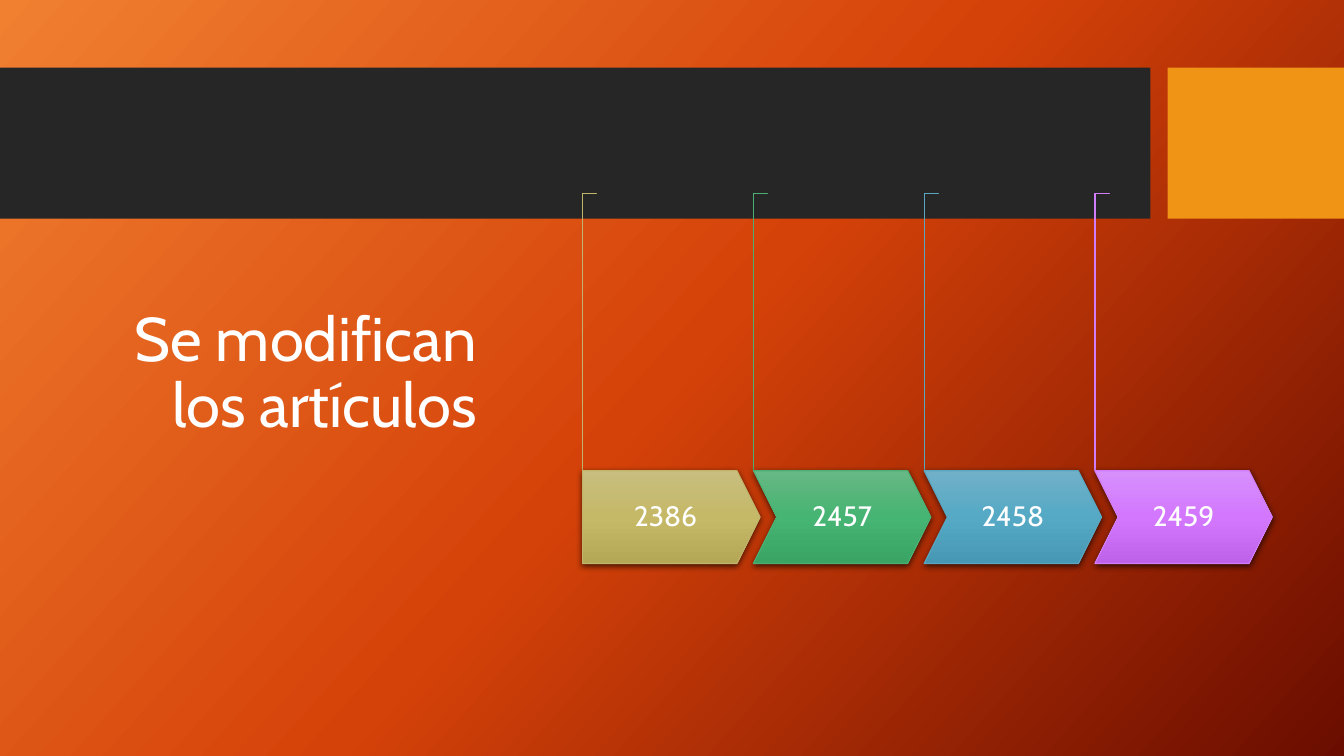
import copy

import pptx
import pptx.dml.color
import pptx.enum.shapes
import pptx.enum.text
import pptx.oxml
import pptx.oxml.ns
import pptx.util

TITLE = "Se modifican los artículos"
ARTICLES = [
    # number, line colour, gradient from top to bottom
    ("2386", "C1B56B", ("C8BE7F", "C5B867", "B4A756")),
    ("2457", "4BAF73", ("67B884", "46B472", "3AA464")),
    ("2458", "5AA6C0", ("71B0C8", "55A9C5", "4798B4")),
    ("2459", "D17DF9", ("D790FB", "D377FF", "BE62EA")),
]
BACKGROUND = ("F18031", "D54209", "6A0D00")
COLORS = {"band": "262626", "accent": "F09415", "text": "FFFFFF"}
FONT = "Cabin"

SLIDE_WIDTH, SLIDE_HEIGHT = 13.33, 7.5
BAND_TOP, BAND_HEIGHT = 0.67, 1.5
BANDS = [(0, 11.41, "band"), (11.58, 1.75, "accent")]
FIRST_LEFT, LAST_LEFT = 5.78, 10.86
PITCH = (LAST_LEFT - FIRST_LEFT) / (len(ARTICLES) - 1)
ARROW_TOP, ARROW_WIDTH, ARROW_HEIGHT = 4.67, 1.76, 0.92
BRACKET_LENGTH, BRACKET_DEPTH = 2.75, 0.14

SHAPES = pptx.enum.shapes.MSO_SHAPE
ALIGN = pptx.enum.text.PP_ALIGN
inches = pptx.util.Inches


def rgb(value):
    return pptx.dml.color.RGBColor.from_string(value)


def fill_gradient(fill, element, colors, clockwise_angle):
    """Give fill, which lies inside element, evenly spaced stops."""
    fill.gradient()
    fill.gradient_angle = 360 - clockwise_angle
    stop_list = element.find(".//" + pptx.oxml.ns.qn("a:gsLst"))
    while len(stop_list) < len(colors):
        stop_list.append(copy.deepcopy(stop_list[0]))
    for index, (stop, color) in enumerate(zip(fill.gradient_stops, colors)):
        stop.position = index / (len(colors) - 1)
        stop.color.rgb = rgb(color)


def add_shape(slide, kind, left, top, width, height, fill=None, line=None):
    shape = slide.shapes.add_shape(
        kind, inches(left), inches(top), inches(width), inches(height))
    shape.shadow.inherit = False
    if fill:
        shape.fill.solid()
        shape.fill.fore_color.rgb = rgb(fill)
    if line:
        shape.line.color.rgb = rgb(line)
        shape.line.width = pptx.util.Pt(0.75)
    else:
        shape.line.fill.background()
    return shape


def add_drop_shadow(shape):
    effects = shape.element.spPr.find(pptx.oxml.ns.qn("a:effectLst"))
    effects.append(pptx.oxml.parse_xml(
        f'<a:outerShdw {pptx.oxml.ns.nsdecls("a")} blurRad="57150" dist="19050" '
        'dir="5400000" algn="ctr" rotWithShape="0">'
        '<a:srgbClr val="000000"><a:alpha val="63000"/></a:srgbClr></a:outerShdw>'))


def write(shape, text, size, alignment):
    frame = shape.text_frame
    frame.text = text
    frame.word_wrap = True
    frame.auto_size = pptx.enum.text.MSO_AUTO_SIZE.NONE
    frame.vertical_anchor = pptx.enum.text.MSO_ANCHOR.MIDDLE
    paragraph = frame.paragraphs[0]
    paragraph.alignment = alignment
    paragraph.line_spacing = 0.9
    font = paragraph.runs[0].font
    font.name, font.size = FONT, pptx.util.Pt(size)
    font.color.rgb = rgb(COLORS["text"])


def add_bracket(slide, left, color):
    """Stand a thin corner upright on the top left of an arrow."""
    center_x = left + BRACKET_DEPTH / 2
    center_y = ARROW_TOP - BRACKET_LENGTH / 2
    bracket = add_shape(
        slide, SHAPES.CORNER,
        center_x - BRACKET_LENGTH / 2, center_y - BRACKET_DEPTH / 2,
        BRACKET_LENGTH, BRACKET_DEPTH, COLORS["text"], color)
    bracket.rotation = 90
    bracket.adjustments[0] = bracket.adjustments[1] = 0.01


def add_arrow(slide, kind, left, number, line, gradient):
    arrow = add_shape(
        slide, kind, left, ARROW_TOP, ARROW_WIDTH, ARROW_HEIGHT, line=line)
    arrow.adjustments[0] = 0.25
    fill_gradient(arrow.fill, arrow.element, gradient, 90)
    add_drop_shadow(arrow)
    write(arrow, number, 20, ALIGN.CENTER)
    frame = arrow.text_frame
    frame.margin_left = frame.margin_right = inches(0.14)
    frame.margin_top = frame.margin_bottom = inches(0.28)


def main():
    presentation = pptx.Presentation()
    presentation.slide_width = inches(SLIDE_WIDTH)
    presentation.slide_height = inches(SLIDE_HEIGHT)
    slide = presentation.slides.add_slide(presentation.slide_layouts[5])
    fill_gradient(slide.background.fill, slide.element, BACKGROUND, 42)

    for left, width, color in BANDS:
        add_shape(slide, SHAPES.RECTANGLE, left, BAND_TOP, width, BAND_HEIGHT,
                  COLORS[color])

    title = slide.shapes.title
    title.left, title.top = inches(0.74), inches(2.26)
    title.width, title.height = inches(4.09), inches(2.91)
    write(title, TITLE, 44, ALIGN.RIGHT)

    for index, (number, line, gradient) in enumerate(ARTICLES):
        left = FIRST_LEFT + index * PITCH
        kind = SHAPES.CHEVRON if index else SHAPES.PENTAGON
        add_bracket(slide, left, line)
        add_arrow(slide, kind, left, number, line, gradient)

    presentation.save("out.pptx")


if __name__ == "__main__":
    main()
